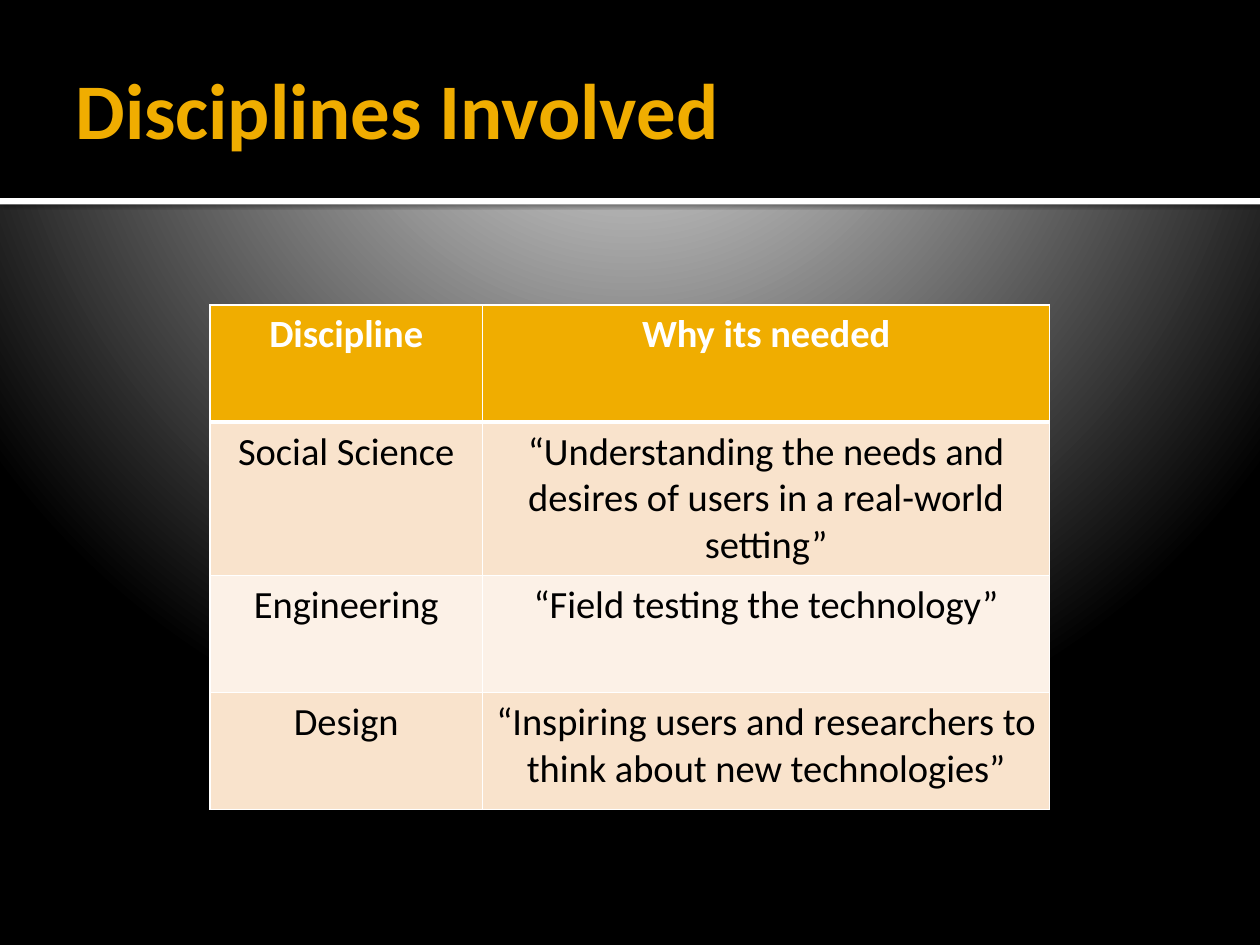
from lxml import etree
from pptx import Presentation
from pptx.dml.color import RGBColor
from pptx.enum.shapes import MSO_SHAPE as Shape
from pptx.enum.text import MSO_ANCHOR as Anchor, MSO_AUTO_SIZE as AutoSize, PP_ALIGN as Align
from pptx.oxml import parse_xml
from pptx.oxml.ns import nsdecls, qn
from pptx.util import Cm, Pt

BLACK = RGBColor(0x00, 0x00, 0x00)
WHITE = RGBColor(0xFF, 0xFF, 0xFF)
GOLD = RGBColor(0xF0, 0xAD, 0x00)
PEACH = RGBColor(0xF9, 0xE3, 0xCC)
CREAM = RGBColor(0xFC, 0xF1, 0xE7)
SILVER = RGBColor(0xC0, 0xC0, 0xC0)
GREY = RGBColor(0xBE, 0xBE, 0xBE)

BACKGROUND_STOPS = [(0, SILVER), (12, SILVER), (20, GREY), (100, BLACK)]
SLIDE_WIDTH = 25.4
BAND_HEIGHT = 3.99
COLUMN_WIDTHS = [5.5, 11.43]
ROW_HEIGHT = 2.36
ROWS = [
    ("Discipline", "Why its needed"),
    ("Social Science", "“Understanding the needs and desires of users in a real-world setting”"),
    ("Engineering", "“Field testing the technology”"),
    ("Design", "“Inspiring users and researchers to think about new technologies”"),
]


def write_text(text_frame, text, size, color, bold=False, align=Align.LEFT):
    paragraph = text_frame.paragraphs[0]
    paragraph.alignment = align
    run = paragraph.add_run()
    run.text = text
    run.font.name = "Calibri"
    run.font.size = Pt(size)
    run.font.bold = bold
    run.font.color.rgb = color


def paint_background(slide):
    fill = slide.background.fill
    fill.solid()
    fill.fore_color.rgb = BLACK
    stops = "".join(
        f'<a:gs pos="{position * 1000}"><a:srgbClr val="{color}"/></a:gs>'
        for position, color in BACKGROUND_STOPS
    )
    gradient = parse_xml(
        f'<a:gradFill {nsdecls("a")} rotWithShape="1"><a:gsLst>{stops}</a:gsLst>'
        '<a:path path="circle"><a:fillToRect l="10000" t="-25000" r="10000" b="125000"/>'
        "</a:path></a:gradFill>"
    )
    solid = slide.element.find(f".//{qn('p:bgPr')}/{qn('a:solidFill')}")
    solid.getparent().replace(solid, gradient)


def add_band(slide, top, height, color):
    band = slide.shapes.add_shape(Shape.RECTANGLE, 0, Cm(top), Cm(SLIDE_WIDTH), Cm(height))
    band.shadow.inherit = False
    band.fill.solid()
    band.fill.fore_color.rgb = color
    band.line.fill.background()
    return band


def add_shadow(shape):
    effects = shape.element.spPr.find(qn("a:effectLst"))
    effects.append(parse_xml(
        f'<a:outerShdw {nsdecls("a")} blurRad="{Pt(2.5)}" dist="{Pt(0.8)}" dir="5400000">'
        f'<a:srgbClr val="{BLACK}"><a:alpha val="60000"/></a:srgbClr></a:outerShdw>'
    ))


def add_title(slide, text):
    title = slide.shapes.title
    title.left, title.top, title.width, title.height = Cm(1.27), Cm(0.43), Cm(22.86), Cm(3.48)
    text_frame = title.text_frame
    text_frame.word_wrap = True
    text_frame.auto_size = AutoSize.NONE
    text_frame.vertical_anchor = Anchor.MIDDLE
    text_frame.margin_left = Cm(0.25)
    text_frame.margin_top = text_frame.margin_right = text_frame.margin_bottom = Cm(0.13)
    write_text(text_frame, text, size=45, color=GOLD, bold=True)
    slide.shapes.element.append(title.element)


def set_borders(cell, top, bottom):
    properties = cell._tc.get_or_add_tcPr()
    for side, width in (("L", 1), ("R", 1), ("T", top), ("B", bottom)):
        line = etree.SubElement(properties, qn(f"a:ln{side}"), w=str(Pt(width)))
        fill = etree.SubElement(line, qn("a:solidFill"))
        etree.SubElement(fill, qn("a:srgbClr"), val=str(WHITE))


def add_discipline_table(slide):
    table = slide.shapes.add_table(
        len(ROWS), len(COLUMN_WIDTHS), Cm(4.23), Cm(6.15),
        Cm(sum(COLUMN_WIDTHS)), Cm(ROW_HEIGHT * len(ROWS)),
    ).table
    for column, width in zip(table.columns, COLUMN_WIDTHS):
        column.width = Cm(width)
    for row_index, texts in enumerate(ROWS):
        table.rows[row_index].height = Cm(ROW_HEIGHT)
        header = row_index == 0
        band_color = PEACH if row_index % 2 else CREAM
        for column_index, text in enumerate(texts):
            cell = table.cell(row_index, column_index)
            set_borders(cell, top=3 if row_index == 1 else 1, bottom=3 if header else 1)
            cell.fill.solid()
            cell.fill.fore_color.rgb = GOLD if header else band_color
            write_text(cell.text_frame, text, size=22, color=WHITE if header else BLACK,
                       bold=header, align=Align.CENTER)


def main():
    presentation = Presentation()
    presentation.slide_width = Cm(SLIDE_WIDTH)
    presentation.slide_height = Cm(19.05)
    slide = presentation.slides.add_slide(presentation.slide_layouts[5])
    paint_background(slide)
    add_shadow(add_band(slide, BAND_HEIGHT, 0.13, WHITE))
    add_band(slide, 0, BAND_HEIGHT, BLACK)
    add_title(slide, "Disciplines Involved")
    add_discipline_table(slide)
    presentation.save("out.pptx")


if __name__ == "__main__":
    main()
